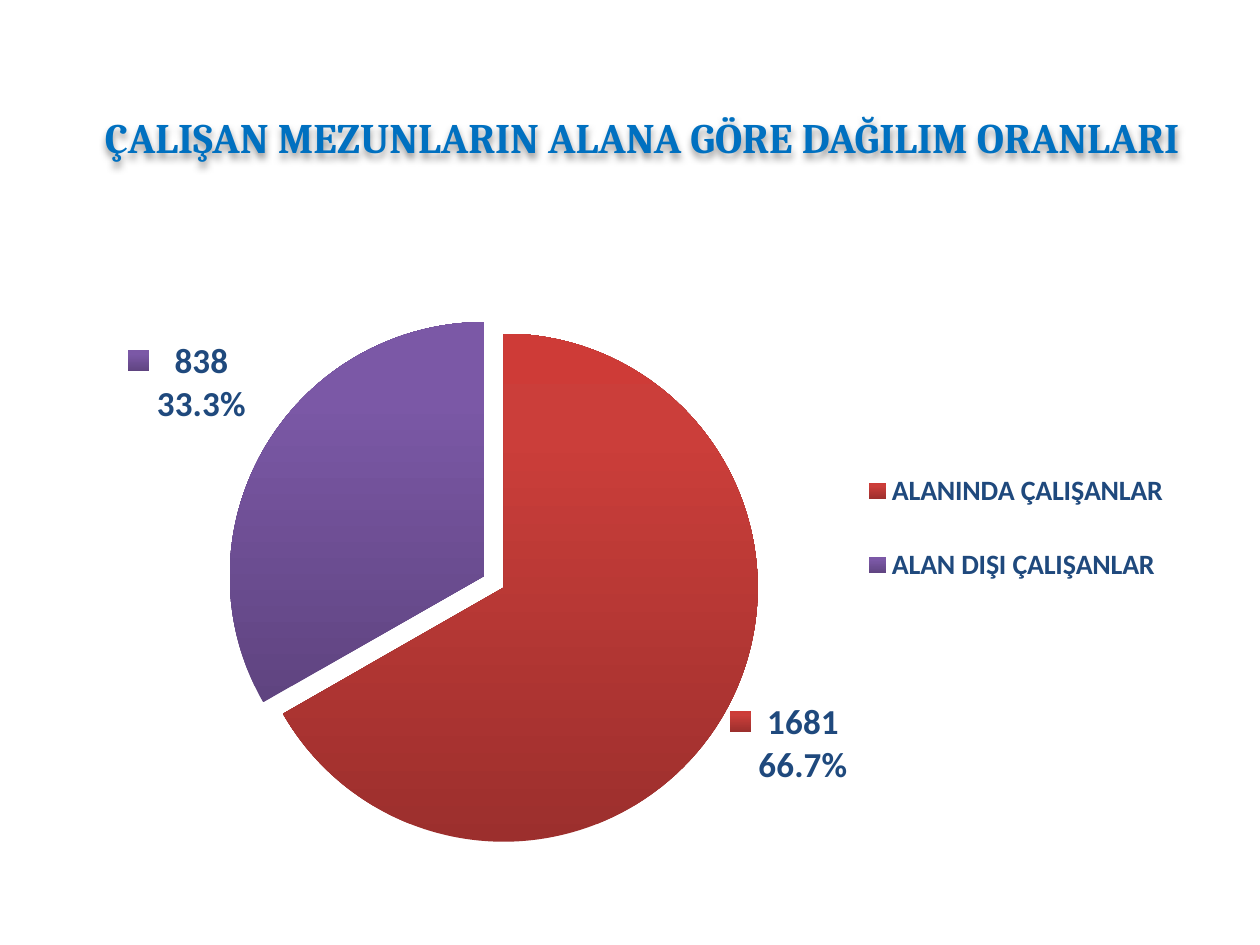
from copy import deepcopy
from dataclasses import dataclass

from pptx import Presentation
from pptx.chart.data import CategoryChartData
from pptx.dml.color import RGBColor
from pptx.enum.chart import XL_CHART_TYPE, XL_LABEL_POSITION, XL_LEGEND_POSITION
from pptx.enum.text import MSO_ANCHOR, PP_ALIGN
from pptx.oxml import parse_xml
from pptx.oxml.ns import nsdecls, qn
from pptx.util import Inches, Pt

PIE = XL_CHART_TYPE.PIE
OUTSIDE_END = XL_LABEL_POSITION.OUTSIDE_END
RIGHT = XL_LEGEND_POSITION.RIGHT
CENTER = PP_ALIGN.CENTER
MIDDLE = MSO_ANCHOR.MIDDLE


@dataclass(frozen=True)
class Theme:
    title_font: str = "Cambria"
    body_font: str = "Calibri"
    title_color: str = "0070C0"
    body_color: str = "1F497D"
    shadow_color: str = "000000"
    title_size: int = 24
    chart_size: int = 32
    label_size: int = 20
    legend_size: int = 16
    # Dark, middle and light stop of each slice
    slices: tuple = (("9C2F2D", "CB3E3A", "CE3B37"),
                     ("5F4480", "7B58A6", "7C57A8"))
    stops: tuple = (0, 80, 100)


THEME = Theme()
WIDTH, HEIGHT = 10, 7.5
TITLE_BOX = (0.5, 0.3, 9.19, 1.57)
CHART_BOX = (0.57, 2.1, 9.14, 4.98)

# Places inside the chart, as shares of its size
PLOT_AREA = (0.15, 0.11, 0.45, 0.81)
LEGEND_AREA = (0.67, 0.27, 0.3, 0.3)
LABEL_SHIFTS = ((0, -0.03), (-0.01, -0.03))
EXPLOSIONS = (0, 9)

GRADUATES = {"ALANINDA ÇALIŞANLAR": 1681, "ALAN DIŞI ÇALIŞANLAR": 838}


def format_font(font, name, size, color, bold=True):
    font.name, font.size, font.bold = name, Pt(size), bold
    font.color.rgb = RGBColor.from_string(color)


def add_text(slide, box, text, *, name, size, color, align=CENTER, anchor=MIDDLE):
    shape = slide.shapes.add_textbox(*map(Inches, box))
    frame = shape.text_frame
    frame.word_wrap = True
    frame.vertical_anchor = anchor
    frame.margin_left = frame.margin_right = Inches(0.12)
    frame.margin_top = frame.margin_bottom = Inches(0.06)
    paragraph = frame.paragraphs[0]
    paragraph.alignment = align
    run = paragraph.add_run()
    run.text = text
    format_font(run.font, name, size, color)
    return shape


def manual_layout(x, y, width=None, height=None, inner=False):
    """Chart layout element: a shift, or a whole box when a size is given."""
    parts = '<c:layoutTarget val="inner"/>' if inner else ""
    if width is not None:
        parts += '<c:xMode val="edge"/><c:yMode val="edge"/>'
    parts += f'<c:x val="{x}"/><c:y val="{y}"/>'
    if width is not None:
        parts += f'<c:w val="{width}"/><c:h val="{height}"/>'
    return parse_xml(f'<c:layout {nsdecls("c")}><c:manualLayout>{parts}'
                     '</c:manualLayout></c:layout>')


def set_layout(parent, layout, position):
    for old in parent.findall(qn("c:layout")):
        parent.remove(old)
    parent.insert(position, layout)


def add_title(slide, box):
    shape = add_text(slide, box, "ÇALIŞAN MEZUNLARIN ALANA GÖRE DAĞILIM ORANLARI",
                     name=THEME.title_font, size=THEME.title_size,
                     color=THEME.title_color)
    # Soft shadow, which falls from the letters as the box has no fill
    shape.element.find(qn("p:spPr")).append(parse_xml(
        f'<a:effectLst {nsdecls("a")}><a:outerShdw blurRad="50800" dist="38100" '
        f'dir="5400000" algn="t" rotWithShape="0"><a:srgbClr val="{THEME.shadow_color}">'
        '<a:alpha val="40000"/></a:srgbClr></a:outerShdw></a:effectLst>'))


def style_slices(chart):
    points = chart.plots[0].series[0].points
    for index, (colors, explosion) in enumerate(zip(THEME.slices, EXPLOSIONS)):
        points[index].format.line.fill.background()
        properties = chart.element.findall(f'.//{qn("c:dPt")}')[index].find(qn("c:spPr"))
        stops = "".join(f'<a:gs pos="{stop * 1000}"><a:srgbClr val="{color}"/></a:gs>'
                        for stop, color in zip(THEME.stops, colors))
        properties.insert(0, parse_xml(
            f'<a:gradFill {nsdecls("a")} rotWithShape="1"><a:gsLst>{stops}</a:gsLst>'
            '<a:lin ang="16200000" scaled="0"/></a:gradFill>'))
        if explosion:
            properties.addprevious(parse_xml(
                f'<c:explosion {nsdecls("c")} val="{explosion}"/>'))


def style_labels(chart):
    labels = chart.plots[0].series[0].data_labels
    labels.show_value = labels.show_percentage = labels.show_legend_key = True
    labels.number_format, labels.number_format_is_linked = "0.0%", False
    labels.position = OUTSIDE_END
    format_font(labels.font, THEME.body_font, THEME.label_size, THEME.body_color)

    # Value and percentage on separate lines, without leader lines
    element = chart.element.find(f'.//{qn("c:ser")}/{qn("c:dLbls")}')
    for leader in element.findall(qn("c:showLeaderLines")):
        element.remove(leader)
    element.append(parse_xml(f'<c:separator {nsdecls("c")}>\n</c:separator>'))
    common = list(element)
    element.append(parse_xml(f'<c:showLeaderLines {nsdecls("c")} val="0"/>'))

    # Each slice's label is the common one, shifted a little
    for index, shift in enumerate(LABEL_SHIFTS):
        label = parse_xml(f'<c:dLbl {nsdecls("c")}><c:idx val="{index}"/></c:dLbl>')
        label.append(manual_layout(*shift))
        label.extend(deepcopy(common))
        element.insert(index, label)


def style_legend(chart):
    chart.has_legend = True
    legend = chart.legend
    legend.position, legend.include_in_layout = RIGHT, False
    format_font(legend.font, THEME.body_font, THEME.legend_size, THEME.body_color)
    set_layout(chart.element.find(f'.//{qn("c:legend")}'),
               manual_layout(*LEGEND_AREA), 1)


def add_pie(slide, box):
    data = CategoryChartData()
    data.categories = list(GRADUATES)
    data.add_series("Series 1", list(GRADUATES.values()))
    chart = slide.shapes.add_chart(PIE, *map(Inches, box), data).chart
    chart.has_title = False
    format_font(chart.font, THEME.body_font, THEME.chart_size, THEME.body_color)
    chart.plots[0].vary_by_categories = True
    set_layout(chart.element.find(f'.//{qn("c:plotArea")}'),
               manual_layout(*PLOT_AREA, inner=True), 0)
    style_slices(chart)
    style_labels(chart)
    style_legend(chart)


def main():
    presentation = Presentation()
    presentation.slide_width, presentation.slide_height = Inches(WIDTH), Inches(HEIGHT)
    slide = presentation.slides.add_slide(presentation.slide_layouts[6])
    add_title(slide, TITLE_BOX)
    add_pie(slide, CHART_BOX)
    presentation.save("out.pptx")


if __name__ == "__main__":
    main()
